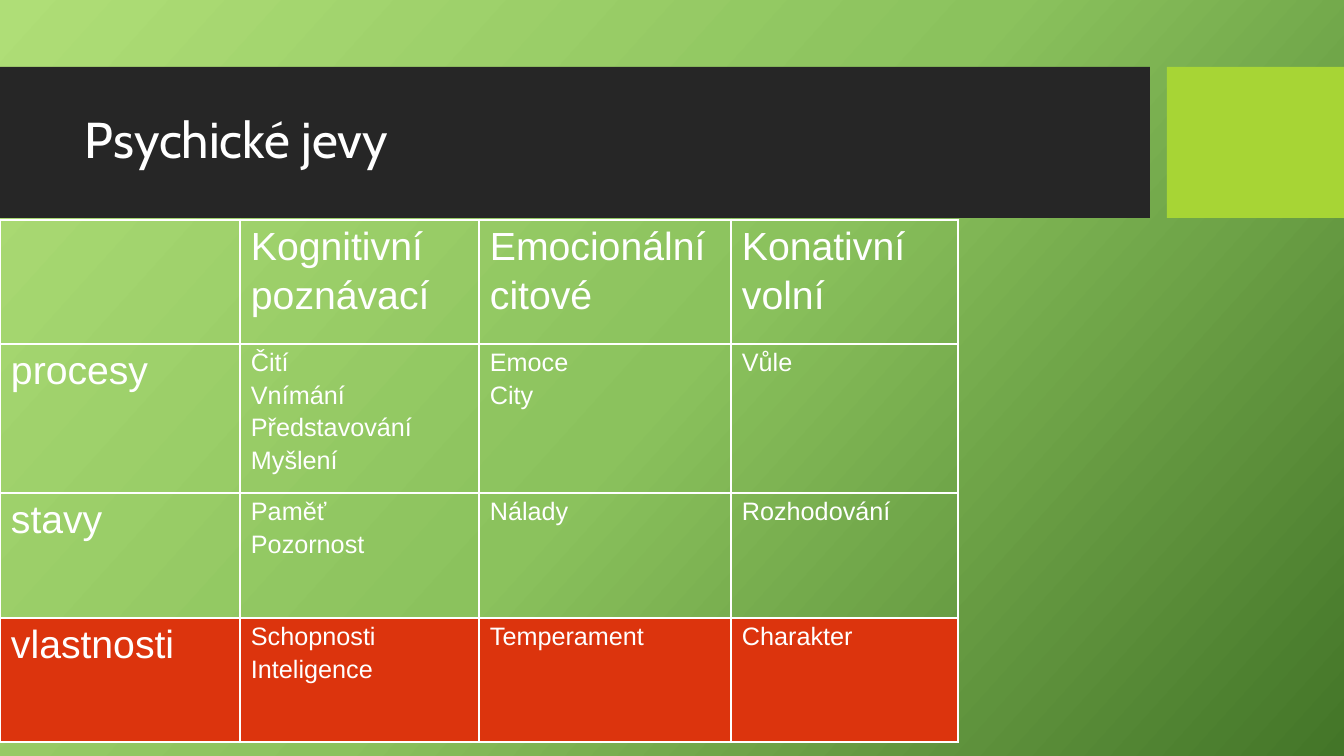
"""Builds the slide on psychic phenomena: a title band over a four-column table."""
from lxml import etree
from pptx import Presentation, util as u
from pptx.dml.color import RGBColor
from pptx.enum import shapes, text
from pptx.oxml.ns import qn

TITLE = "Psychické jevy"
ROWS = [
    [[], ["Kognitivní", "poznávací"], ["Emocionální", "citové"], ["Konativní", "volní"]],
    [["procesy"], ["Čití", "Vnímání", "Představování", "Myšlení"], ["Emoce", "City"], ["Vůle"]],
    [["stavy"], ["Paměť", "Pozornost"], ["Nálady"], ["Rozhodování"]],
    [["vlastnosti"], ["Schopnosti", "Inteligence"], ["Temperament"], ["Charakter"]],
]
COLUMN_WIDTHS = [240, 239, 252, 227]
ROW_HEIGHTS = [124, 149, 125, 124]
TABLE_TOP = 220

WHITE = RGBColor(0xFF, 0xFF, 0xFF)
BAND = RGBColor(0x26, 0x26, 0x26)
LIME = RGBColor(0xA7, 0xD5, 0x35)
RED = RGBColor(0xDC, 0x34, 0x0D)
GRADIENT = [
    (0, RGBColor(0xAF, 0xDE, 0x77)),
    (50, RGBColor(0x8B, 0xC2, 0x5D)),
    (100, RGBColor(0x43, 0x75, 0x28)),
]
GRADIENT_ANGLE = 42
EMU_PER_PX = 914400 / 100.8


def px(length):
    return u.Emu(round(length * EMU_PER_PX))


def add_color(parent, color):
    etree.SubElement(parent, qn("a:srgbClr"), val=str(color))


def paint_background(page):
    fill = page.background.fill
    fill.gradient()
    gradient = page.element.find(".//" + qn("a:gradFill"))
    stops = gradient.find(qn("a:gsLst"))
    for stop in list(stops):
        stops.remove(stop)
    for position, color in GRADIENT:
        add_color(etree.SubElement(stops, qn("a:gs"), pos=str(position * 1000)), color)
    line = gradient.find(qn("a:lin"))
    line.set("ang", str(GRADIENT_ANGLE * 60000))
    line.set("scaled", "0")


def add_block(page, left, width, color):
    block = page.shapes.add_shape(
        shapes.MSO_SHAPE.RECTANGLE, px(left), px(67), px(width), px(151))
    block.shadow.inherit = False
    block.fill.solid()
    block.fill.fore_color.rgb = color
    block.line.fill.background()


def add_title(page):
    box = page.shapes.add_textbox(px(75), px(83), px(1059), px(119))
    frame = box.text_frame
    frame.word_wrap = True
    frame.vertical_anchor = text.MSO_ANCHOR.MIDDLE
    para = frame.paragraphs[0]
    para.text = TITLE
    para.line_spacing = 0.9
    set_font(para, "Cabin", 36)


def set_font(para, name, size):
    para.font.name = name
    para.font.size = u.Pt(size)
    para.font.color.rgb = WHITE
    para.font.bold = False


def add_border(cell, side, width):
    properties = cell._tc.get_or_add_tcPr()
    line = etree.SubElement(properties, qn("a:ln" + side), w=str(u.Pt(width)))
    add_color(etree.SubElement(line, qn("a:solidFill")), WHITE)


def fill_cell(cell, lines, row, column):
    last_row, last_column = len(ROWS) - 1, len(COLUMN_WIDTHS) - 1
    outer_edges = {"L": column == 0, "R": column == last_column,
                   "T": row == 0, "B": row == last_row}
    for side, outer in outer_edges.items():
        add_border(cell, side, 2.25 if outer else 1)
    if row == last_row:
        cell.fill.solid()
        cell.fill.fore_color.rgb = RED
    else:
        cell.fill.background()
    cell.margin_left = cell.margin_right = px(11)
    cell.margin_top = cell.margin_bottom = px(5)
    heading = row == 0 or column == 0
    cell.text_frame.text = "\n".join(lines)
    for index, para in enumerate(cell.text_frame.paragraphs):
        if index:
            para.space_before = u.Pt(4 if heading else 3)
        set_font(para, "Arial", 28 if heading else 18)


def add_phenomena(page):
    frame = page.shapes.add_table(
        len(ROWS), len(COLUMN_WIDTHS), 0, px(TABLE_TOP),
        px(sum(COLUMN_WIDTHS)), px(sum(ROW_HEIGHTS)))
    table = frame.table
    table.first_row = table.horz_banding = False
    for column, width in zip(table.columns, COLUMN_WIDTHS):
        column.width = px(width)
    for row, height in zip(table.rows, ROW_HEIGHTS):
        row.height = px(height)
    for row, cells in enumerate(ROWS):
        for column, lines in enumerate(cells):
            fill_cell(table.cell(row, column), lines, row, column)


def main():
    deck = Presentation()
    deck.slide_width, deck.slide_height = px(1344), px(756)
    page = deck.slides.add_slide(deck.slide_layouts[6])
    paint_background(page)
    add_block(page, 0, 1150, BAND)
    add_block(page, 1167, 177, LIME)
    add_title(page)
    add_phenomena(page)
    deck.save("out.pptx")


if __name__ == "__main__":
    main()
